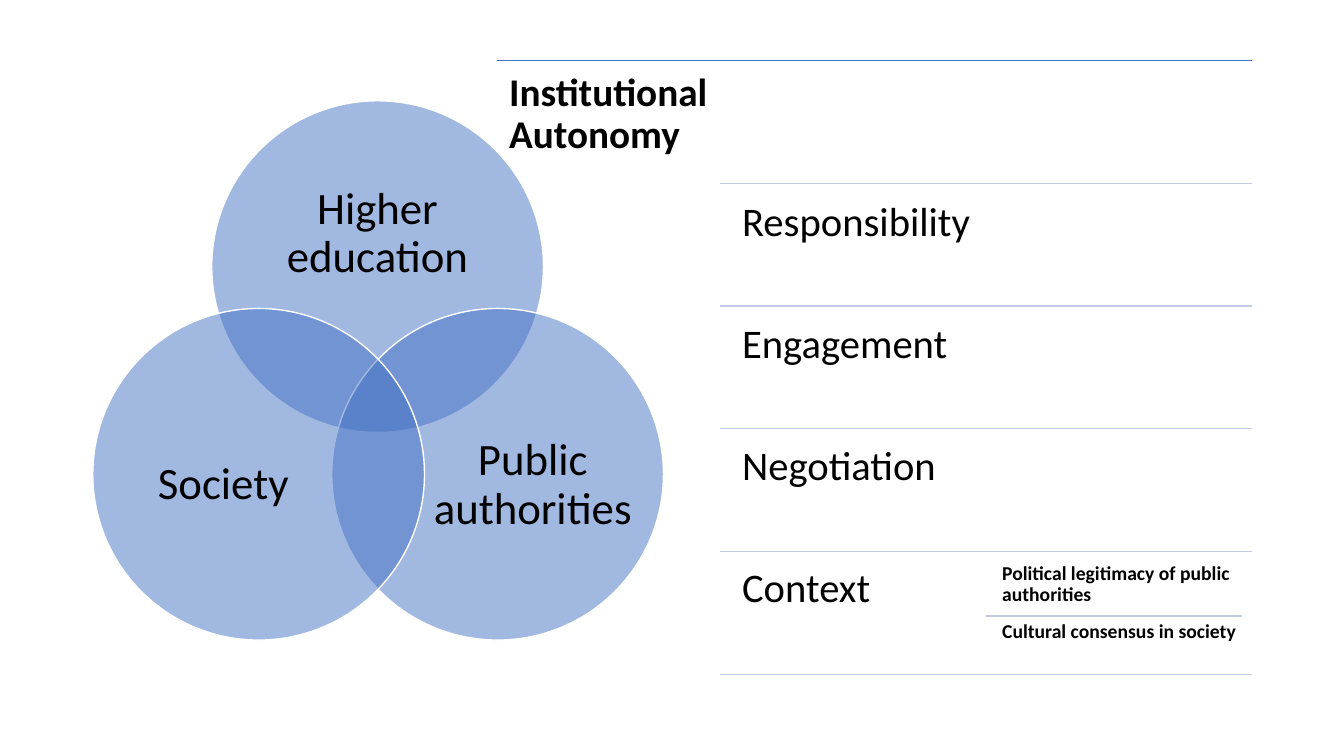
from lxml import etree
from pptx import Presentation, util as u
from pptx.dml.color import RGBColor
from pptx.enum import shapes, text
from pptx.oxml import ns

look = {
    "font": "Calibri",
    "ink": RGBColor(0, 0, 0),
    "blue": RGBColor(0x44, 0x72, 0xC4),
    "pale": RGBColor(0xC1, 0xC9, 0xE4),
    "white": RGBColor(255, 255, 255),
    "ring": 32, "head": 28, "list": 29, "note": 14,
}
LEFT, MID = text.PP_ALIGN.LEFT, text.PP_ALIGN.CENTER
TOP, CORE = text.MSO_ANCHOR.TOP, text.MSO_ANCHOR.MIDDLE


def write(box, place, lines, size, bold=False, align=LEFT, anchor=TOP, inset=0, gap=0):
    box.left, box.top, box.width, box.height = map(u.Inches, place)
    frame = box.text_frame
    frame.text = "\n".join(lines)
    pad = u.Inches(inset)
    form = {"word_wrap": True, "auto_size": text.MSO_AUTO_SIZE.NONE,
            "vertical_anchor": anchor, "margin_left": pad, "margin_right": pad,
            "margin_top": pad, "margin_bottom": pad}
    for key, val in form.items():
        setattr(frame, key, val)
    para = {"alignment": align, "line_spacing": 0.9,
            "space_before": u.Pt(0), "space_after": u.Pt(gap)}
    face = {"name": look["font"], "size": u.Pt(look[size]), "bold": bold}
    for p in frame.paragraphs:
        for key, val in para.items():
            setattr(p, key, val)
        for key, val in face.items():
            setattr(p.runs[0].font, key, val)
        p.runs[0].font.color.rgb = look["ink"]


def rule(start, end, y, tint):
    line = slide.shapes.add_connector(
        shapes.MSO_CONNECTOR.STRAIGHT,
        u.Inches(start), u.Inches(y), u.Inches(end), u.Inches(y))
    line.line.color.rgb = look[tint]
    line.line.width = u.Pt(1)
    etree.SubElement(line._element.spPr, ns.qn("a:effectLst"))


deck = Presentation()
deck.slide_width, deck.slide_height = u.Inches(13.33), u.Inches(7.5)
slide = deck.slides.add_slide(deck.slide_layouts[1])
head, body = slide.placeholders

disc = 3.29
rings = [
    ("Higher education", 2.1, 1, (2.54, 1.58, 2.41, 1.48)),
    ("Public authorities", 3.29, 3.06, (4.3, 3.91, 1.97, 1.81)),
    ("Society", 0.92, 3.06, (1.23, 3.91, 1.97, 1.81)),
]
for name, x, y, place in rings:
    ring = slide.shapes.add_shape(
        shapes.MSO_SHAPE.OVAL, *map(u.Inches, (x, y, disc, disc)))
    ring.shadow.inherit = False
    ring.fill.solid()
    ring.fill.fore_color.rgb = look["blue"]
    tint = ring._element.spPr.find(ns.qn("a:solidFill"))[0]
    etree.SubElement(tint, ns.qn("a:alpha"), val="50000")
    ring.line.color.rgb = look["white"]
    ring.line.width = u.Pt(1)
    label = slide.shapes.add_textbox(0, 0, 0, 0)
    write(label, place, [name], "ring", align=MID, anchor=CORE)

top, step, edge = 0.6, 1.218, 12.42
rule(4.93, edge, top, "blue")
write(head, (4.93, top, 2.22, 6.15), ["Institutional Autonomy"], "head",
      bold=True, inset=0.12)

items = ["Responsibility", "Engagement", "Negotiation", "Context"]
write(body, (7.24, 1.88, 2.54, 4.81), items, "list", inset=0.12, gap=55.8)
for p in body.text_frame.paragraphs:
    props = p._p.get_or_add_pPr()
    props.set("marL", "0")
    props.set("indent", "0")
    etree.SubElement(props, ns.qn("a:buNone"))
for n in range(len(items) + 1):
    rule(7.14, edge, top + step * (n + 1), "pale")

notes = ["Political legitimacy of public authorities", "Cultural consensus in society"]
for n, note in enumerate(notes):
    box = slide.shapes.add_textbox(0, 0, 0, 0)
    write(box, (9.88, 5.53 + 0.58 * n, 2.54, 0.58), [note], "note",
          bold=True, inset=0.06)
rule(9.78, 12.32, 6.11, "pale")

deck.save("out.pptx")
